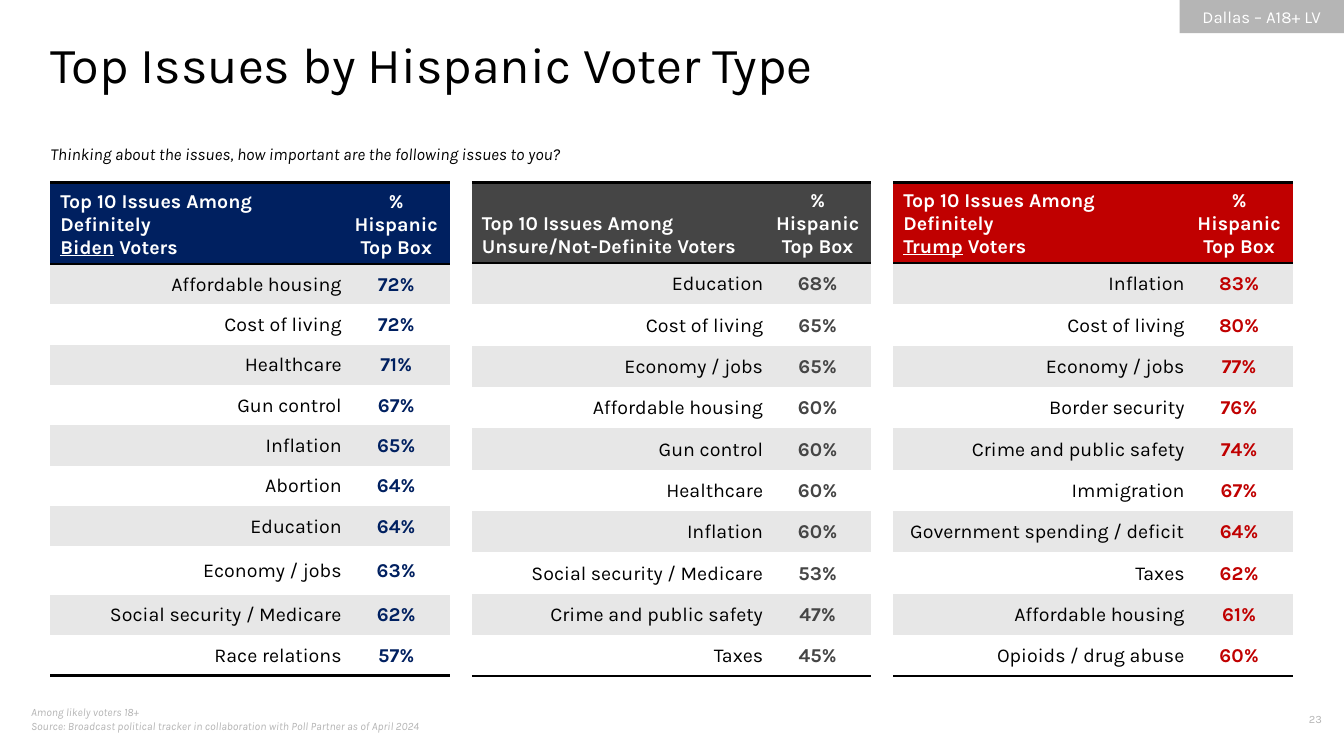
from pptx import Presentation
from pptx.util import Inches, Pt
from pptx.dml.color import RGBColor
from pptx.enum.shapes import MSO_SHAPE as Shape
from pptx.enum.text import PP_ALIGN as Align, MSO_ANCHOR as Anchor
from pptx.oxml import parse_xml
from pptx.oxml.ns import nsdecls

FONT = "Karla"
BLACK, WHITE, PALE, BAND = "000000", "FFFFFF", "B5B5B5", "E7E7E7"
TITLE = "Top Issues by Hispanic Voter Type"
ASK = "Thinking about the issues, how important are the following issues to you?"
TAG = "Dallas – A18+ LV"
NOTE = ("Among likely voters 18+\v"
        "Source: Broadcast political tracker in collaboration with Poll Partner as of April 2024")
PAGE = "23"
SHARE = ["% Hispanic", "Top Box"]
GROUPS = [
    {"color": "002060", "head": ["Top 10 Issues Among Definitely", ("Biden", " Voters")],
     "top": 0.81, "row": 0.4, "tall": {8: 0.48},
     "rows": [("Affordable housing", "72%"), ("Cost of living", "72%"),
              ("Healthcare", "71%"), ("Gun control", "67%"), ("Inflation", "65%"),
              ("Abortion", "64%"), ("Education", "64%"), ("Economy / jobs", "63%"),
              ("Social security / Medicare", "62%"), ("Race relations", "57%")]},
    {"color": "454545", "head": ["Top 10 Issues Among Unsure/Not-Definite Voters"],
     "top": 0.78, "row": 0.41, "tall": {},
     "rows": [("Education", "68%"), ("Cost of living", "65%"),
              ("Economy / jobs", "65%"), ("Affordable housing", "60%"),
              ("Gun control", "60%"), ("Healthcare", "60%"), ("Inflation", "60%"),
              ("Social security / Medicare", "53%"),
              ("Crime and public safety", "47%"), ("Taxes", "45%")]},
    {"color": "C00000", "head": ["Top 10 Issues Among Definitely", ("Trump", " Voters")],
     "top": 0.78, "row": 0.41, "tall": {},
     "rows": [("Inflation", "83%"), ("Cost of living", "80%"),
              ("Economy / jobs", "77%"), ("Border security", "76%"),
              ("Crime and public safety", "74%"), ("Immigration", "67%"),
              ("Government spending / deficit", "64%"), ("Taxes", "62%"),
              ("Affordable housing", "61%"), ("Opioids / drug abuse", "60%")]},
]
LEFT, TOP, STEP = 0.5, 1.81, 4.18
COLS = (2.9, 1.06)
PLAIN = "{2D5ABB26-0587-4C30-8999-92F81FD0307C}"


def paint(fill, color):
    fill.solid()
    fill.fore_color.rgb = RGBColor.from_string(color)


def write(frame, lines, size, color, align=Align.LEFT, bold=False, italic=False):
    for i, line in enumerate(lines):
        para = frame.add_paragraph() if i else frame.paragraphs[0]
        if isinstance(line, tuple):
            for j, part in enumerate(line):
                run = para.add_run()
                run.text = part
                run.font.underline = j == 0
        else:
            para.text = line
        para.alignment = align
        font = para.font
        font.name, font.size, font.bold, font.italic = FONT, Pt(size), bold, italic
        font.color.rgb = RGBColor.from_string(color)


def inset(frame, gap=0):
    frame.margin_left = frame.margin_right = Inches(gap)
    frame.margin_top, frame.margin_bottom = Inches(gap), 0


def note(box, text, size, color, align=Align.LEFT, italic=False, flush=False):
    frame = slide.shapes.add_textbox(*map(Inches, box)).text_frame
    frame.word_wrap = True
    if flush:
        inset(frame)
    write(frame, [text], size, color, align, italic=italic)


def rule(cell, sides):
    props = cell._tc.get_or_add_tcPr()
    for i, side in enumerate(sides):
        props.insert(i, parse_xml(
            f'<a:{side} {nsdecls("a")} w="{Pt(2)}"><a:solidFill>'
            f'<a:srgbClr val="{BLACK}"/></a:solidFill></a:{side}>'))


def draw(group, left):
    count = len(group["rows"])
    sizes = [group["top"]] + [group["tall"].get(r, group["row"])
                              for r in range(1, count + 1)]
    table = slide.shapes.add_table(
        count + 1, 2, Inches(left), Inches(TOP),
        Inches(sum(COLS)), Inches(sum(sizes))).table
    table._tbl.tblPr.find("{*}tableStyleId").text = PLAIN
    for col, wide in zip(table.columns, COLS):
        col.width = Inches(wide)
    for row, high in zip(table.rows, sizes):
        row.height = Inches(high)

    color = group["color"]
    for c, lines in enumerate((group["head"], SHARE)):
        cell = table.cell(0, c)
        paint(cell.fill, color)
        cell.vertical_anchor = Anchor.BOTTOM
        write(cell.text_frame, lines, 14, WHITE,
              Align.CENTER if c else Align.LEFT, bold=True)
        rule(cell, ("lnT", "lnB"))

    for r, pair in enumerate(group["rows"], 1):
        for c, text in enumerate(pair):
            cell = table.cell(r, c)
            paint(cell.fill, BAND if r % 2 else WHITE)
            cell.vertical_anchor = Anchor.MIDDLE
            inset(cell, 0.01)
            write(cell.text_frame, [text], 14, color if c else BLACK,
                  Align.CENTER if c else Align.RIGHT, bold=bool(c))
            if r == count:
                rule(cell, ("lnB",))


deck = Presentation()
deck.slide_width, deck.slide_height = Inches(13.33), Inches(7.5)
slide = deck.slides.add_slide(deck.slide_layouts[5])

tag = slide.shapes.add_shape(Shape.RECTANGLE, *map(Inches, (11.7, 0, 1.63, 0.33)))
tag.shadow.inherit = False
paint(tag.fill, PALE)
tag.line.fill.background()
tag.text_frame.vertical_anchor = Anchor.MIDDLE
write(tag.text_frame, [TAG], 12, WHITE, Align.CENTER)

note((0.21, 6.95, 5.11, 0.4), NOTE, 8, PALE, italic=True)
note((12.33, 7.02, 0.88, 0.27), PAGE, 8, PALE, Align.RIGHT)

title = slide.shapes.title
title.left, title.top, title.width, title.height = map(Inches, (LEFT, 0.33, 12, 0.61))
inset(title.text_frame)
title.text_frame.vertical_anchor = Anchor.TOP
write(title.text_frame, [TITLE], 36, BLACK)
note((LEFT, 1.43, 12, 0.2), ASK, 12, BLACK, italic=True, flush=True)

for i, group in enumerate(GROUPS):
    draw(group, LEFT + i * STEP)

deck.save("out.pptx")
